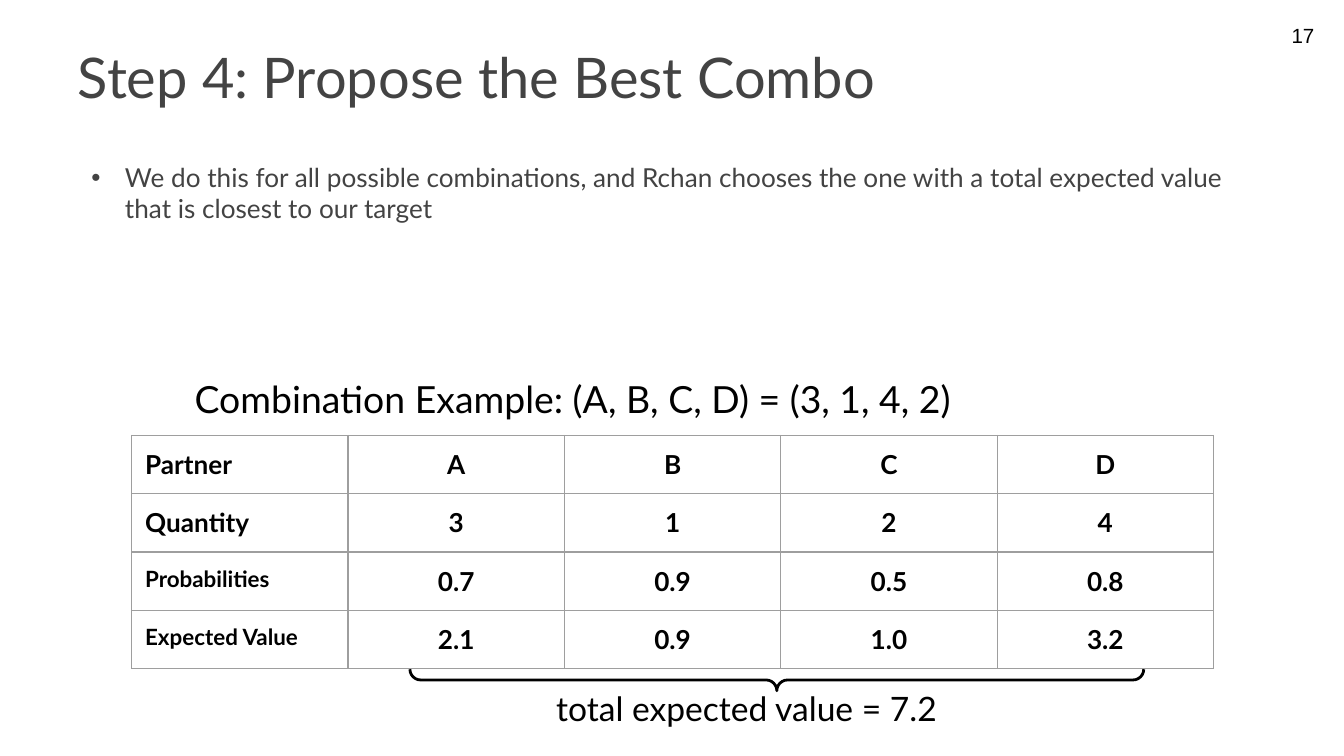
import pptx
import pptx.dml.color
import pptx.enum.shapes
import pptx.enum.text
import pptx.oxml
import pptx.oxml.ns
import pptx.util
from pptx.util import Inches

ALIGN = pptx.enum.text.PP_ALIGN
ANCHOR = pptx.enum.text.MSO_ANCHOR
BLACK, GREY, BORDER = "000000", "434343", "9E9E9E"

ROWS = [
    ("Partner", "A", "B", "C", "D"),
    ("Quantity", "3", "1", "2", "4"),
    ("Probabilities", "0.7", "0.9", "0.5", "0.8"),
    ("Expected Value", "2.1", "0.9", "1.0", "3.2"),
]


def colour(value):
    return pptx.dml.color.RGBColor.from_string(value)


def xml_element(text):
    """Parse a fragment whose root tag starts with the a: prefix."""
    tag, rest = text.split(" ", 1)
    namespace = pptx.oxml.ns.nsdecls("a")
    return pptx.oxml.parse_xml(f"{tag} {namespace} {rest}")


def place(shape, box):
    shape.left, shape.top, shape.width, shape.height = map(Inches, box)


def set_margins(frame, side, end):
    frame.margin_left = frame.margin_right = Inches(side)
    frame.margin_top = frame.margin_bottom = Inches(end)


def write(frame, text, size, ink=BLACK, face="Lato", bold=False, align=ALIGN.LEFT):
    frame.text = text
    para = frame.paragraphs[0]
    para.alignment = align
    para.space_before = pptx.util.Pt(0)
    for span in para.runs:
        span.font.name = face
        span.font.size = pptx.util.Pt(size)
        span.font.bold = bold
        span.font.color.rgb = colour(ink)


def fill_placeholder(shape, box, text, size, anchor):
    place(shape, box)
    frame = shape.text_frame
    frame.auto_size = pptx.enum.text.MSO_AUTO_SIZE.NONE
    frame.vertical_anchor = anchor
    set_margins(frame, 0.07, 0.04)
    write(frame, text, size, GREY)


def add_bullet(para):
    properties = para._p.get_or_add_pPr()
    properties.set("marL", str(Inches(0.35)))
    properties.set("indent", str(Inches(-0.25)))
    properties.append(xml_element(f'<a:buClr ><a:srgbClr val="{GREY}"/></a:buClr>'))
    properties.append(xml_element('<a:buFont typeface="Arial"/>'))
    properties.append(xml_element('<a:buChar char="•"/>'))


def add_label(page, box, text, size, margins=(0.1, 0.1), **style):
    frame = page.shapes.add_textbox(*map(Inches, box)).text_frame
    frame.word_wrap = True
    set_margins(frame, *margins)
    write(frame, text, size, **style)


def set_borders(cell):
    properties = cell._tc.get_or_add_tcPr()
    for position, side in enumerate(("lnL", "lnR", "lnT", "lnB")):
        line = xml_element(
            f'<a:{side} w="{pptx.util.Pt(0.75)}"><a:solidFill>'
            f'<a:srgbClr val="{BORDER}"/></a:solidFill></a:{side}>'
        )
        properties.insert(position, line)


def add_combination_table(page, box):
    shape = page.shapes.add_table(len(ROWS), len(ROWS[0]), *map(Inches, box))
    table = shape.table
    table.first_row = table.horz_banding = False
    for row, values in enumerate(ROWS):
        for column, value in enumerate(values):
            cell = table.cell(row, column)
            set_margins(cell, 0.1, 0.1)
            cell.fill.background()
            set_borders(cell)
            is_label = column == 0
            size = 12 if is_label and row >= 2 else 14
            align = ALIGN.LEFT if is_label else ALIGN.CENTER
            write(cell.text_frame, value, size, bold=True, align=align)


def add_total_brace(page, box):
    """Draw a brace that opens upwards and spans the given box."""
    left, top, width, height = box
    upright = (left + (width - height) / 2, top + (height - width) / 2, height, width)
    kind = pptx.enum.shapes.MSO_SHAPE.RIGHT_BRACE
    brace = page.shapes.add_shape(kind, *map(Inches, upright))
    brace.rotation = 90
    brace.adjustments[0] = 0.5
    brace.adjustments[1] = 0.5
    brace.shadow.inherit = False
    brace.fill.background()
    brace.line.color.rgb = colour(BLACK)
    brace.line.width = pptx.util.Pt(1.5)


def add_example(page, box):
    """Place the heading, table, brace and total inside the box."""
    left, top, width, _ = box
    add_combination_table(page, (left, top + 0.54, width, 1.68))
    add_total_brace(page, (left + 2.07, top + 2.28, 5.46, 0.16))
    add_label(page, (left + 3.06, top + 2.32, 5.73, 0.5), "total expected value = 7.2", 18)
    heading = "Combination Example: (A, B, C, D) = (3, 1, 4, 2)"
    add_label(page, (left + 0.37, top, 7.2, 0.54), heading, 20)


def build_page(deck):
    page = deck.slides.add_slide(deck.slide_layouts[1])
    title, body = page.placeholders
    fill_placeholder(title, (0.51, 0.15, 9, 0.83), "Step 4: Propose the Best Combo", 30, ANCHOR.MIDDLE)
    message = (
        "We do this for all possible combinations, and Rchan chooses the one "
        "with a total expected value that is closest to our target"
    )
    fill_placeholder(body, (0.51, 1.16, 9, 1.4), message, 14, ANCHOR.TOP)
    add_bullet(body.text_frame.paragraphs[0])
    add_label(page, (7.52, 0.13, 2.33, 0.39), "17", 11, (0.07, 0.04), face="Arial", align=ALIGN.RIGHT)
    add_example(page, (0.98, 2.7, 8.05, 2.82))


def main():
    deck = pptx.Presentation()
    deck.slide_width = Inches(10)
    deck.slide_height = deck.slide_width * 9 // 16
    build_page(deck)
    deck.save("out.pptx")


if __name__ == "__main__":
    main()
